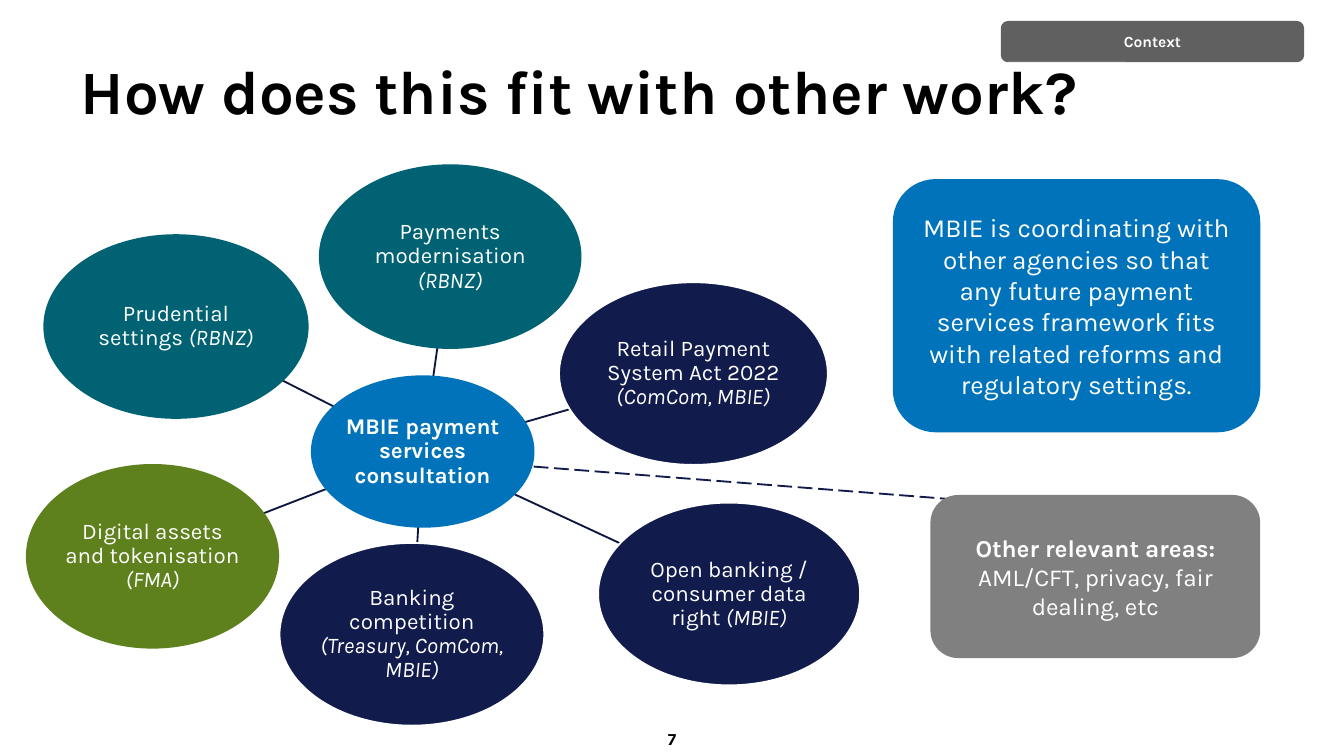
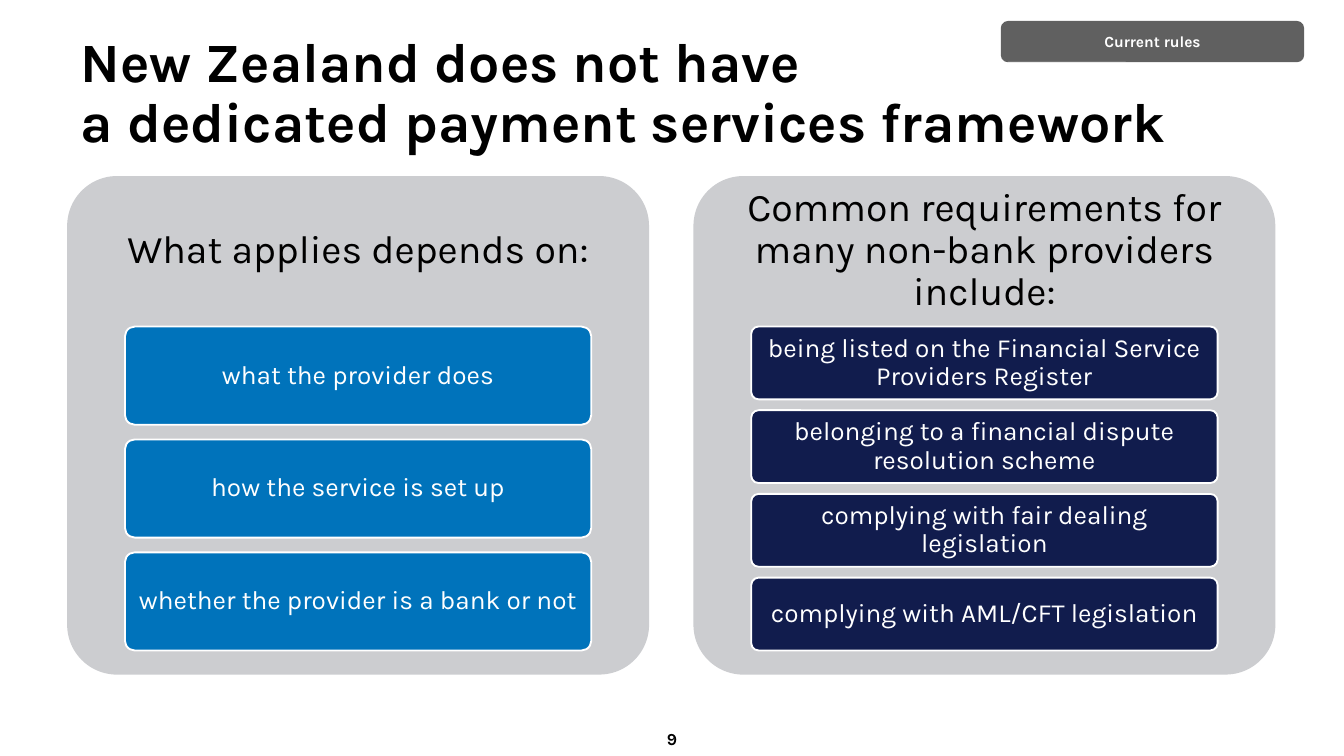
from dataclasses import dataclass
from math import hypot

from lxml.etree import SubElement
from pptx import Presentation
from pptx.dml.color import RGBColor
from pptx.enum.dml import MSO_LINE
from pptx.enum.shapes import MSO_CONNECTOR, MSO_SHAPE as SHAPE
from pptx.enum.text import MSO_ANCHOR, MSO_AUTO_SIZE, PP_ALIGN as ALIGN
from pptx.oxml.ns import qn
from pptx.util import Inches, Pt


@dataclass(frozen=True)
class Theme:
    font: str = "Karla"
    black: str = "000000"
    white: str = "FFFFFF"
    blue: str = "0073BB"
    navy: str = "111C4D"
    spoke: str = "0E163E"
    teal: str = "016273"
    green: str = "5E811D"
    grey: str = "808080"
    tag_grey: str = "606060"
    panel_grey: str = "CCCDD0"
    title: float = 33
    long_title: float = 29.7
    heading: float = 21
    body: float = 14
    aside: float = 13
    node: float = 12
    page: float = 9
    tag: float = 8.3


theme = Theme()


def write(frame, text, *, size, color=theme.white, bold=False, italic=False,
          align=ALIGN.CENTER, spacing=1.0):
    """Append text to the frame's first paragraph; a newline is a line break."""
    paragraph = frame.paragraphs[0]
    paragraph.alignment = align
    paragraph.line_spacing = spacing
    for number, line in enumerate(text.split("\n")):
        if number:
            paragraph.add_line_break()
        run = paragraph.add_run()
        run.text = line
        font = run.font
        font.name, font.size = theme.font, Pt(size)
        font.bold, font.italic = bold, italic
        font.color.rgb = RGBColor.from_string(color)


def add_block(slide, kind, box, fill=None, line=None, line_width=1.0,
              inset=(0.1, 0.05), corner=None):
    """Add a filled shape, or a text box if kind is None; return its text frame."""
    place = [Inches(value) for value in box]
    if kind is None:
        block = slide.shapes.add_textbox(*place)
    else:
        block = slide.shapes.add_shape(kind, *place)
        block.shadow.inherit = False
        block.fill.solid()
        block.fill.fore_color.rgb = RGBColor.from_string(fill)
        if line:
            block.line.color.rgb = RGBColor.from_string(line)
            block.line.width = Pt(line_width)
        else:
            block.line.fill.background()
        if corner is not None:
            block.adjustments[0] = corner
    frame = block.text_frame
    frame.word_wrap = True
    frame.vertical_anchor = MSO_ANCHOR.MIDDLE
    frame.margin_left = frame.margin_right = Inches(inset[0])
    frame.margin_top = frame.margin_bottom = Inches(inset[1])
    return frame


deck = Presentation()
deck.slide_width = Inches(10)
deck.slide_height = deck.slide_width * 9 // 16

# Title, section tag and page number on every slide
slides = []
for title_text, title_size, section, page in [
    ("How does this fit with other work?", theme.title, "Context", "7"),
    ("New Zealand does not have\na dedicated payment services framework",
     theme.long_title, "Current rules", "9"),
]:
    slide = deck.slides.add_slide(deck.slide_layouts[5])
    slides.append(slide)
    title = slide.shapes.title
    title.left, title.top = Inches(0.5), Inches(0.23)
    title.width, title.height = Inches(9), Inches(0.94)
    title.text_frame.auto_size = MSO_AUTO_SIZE.NONE
    title.text_frame.vertical_anchor = MSO_ANCHOR.MIDDLE
    write(title.text_frame, title_text, size=title_size, color=theme.black,
          bold=True, align=ALIGN.LEFT, spacing=0.9)
    tag = add_block(slide, SHAPE.ROUNDED_RECTANGLE, (7.45, 0.16, 2.25, 0.3),
                    theme.tag_grey, theme.tag_grey, 0.5, inset=(0.04, 0.01))
    write(tag, section, size=theme.tag, bold=True)
    footer = add_block(slide, None, (0.69, 5.35, 8.62, 0.3))
    write(footer, page, size=theme.page, color=theme.black, bold=True)

related_work, current_rules = slides

# Related work: a hub with spokes
hub = (2.32, 2.8, 1.65, 1.12)
nodes = [
    ("Payments modernisation ", "(RBNZ)", (2.38, 1.23, 1.94, 1.36),
     theme.teal, theme.teal),
    ("Retail Payment System Act 2022 ", "(ComCom, MBIE)", (4.16, 2.1, 2, 1.36),
     theme.navy, theme.white),
    ("Open banking / consumer data right ", "(MBIE)", (4.45, 3.74, 1.95, 1.36),
     theme.navy, theme.white),
    ("Banking competition ", "(Treasury, ComCom, MBIE)", (2.08, 4.04, 1.97, 1.36),
     theme.navy, theme.white),
    ("Digital assets and tokenisation ", "(FMA)", (0.2, 3.46, 1.87, 1.36),
     theme.green, theme.green),
    ("Prudential settings ", "(RBNZ)", (0.33, 1.75, 1.96, 1.36),
     theme.teal, theme.teal),
]

# Each spoke runs between the two ellipse edges along the line of centres
links = [((3.82, 3.46), (7.28, 3.73), theme.navy, MSO_LINE.LONG_DASH)]
hub_x, hub_y = hub[0] + hub[2] / 2, hub[1] + hub[3] / 2
for _, _, (left, top, width, height), _, _ in nodes:
    node_x, node_y = left + width / 2, top + height / 2
    dx, dy = node_x - hub_x, node_y - hub_y
    leave = 1 / hypot(dx / (hub[2] / 2), dy / (hub[3] / 2))
    arrive = 1 / hypot(dx / (width / 2), dy / (height / 2))
    links.append(((hub_x + dx * leave, hub_y + dy * leave),
                  (node_x - dx * arrive, node_y - dy * arrive), theme.spoke, None))

for start, end, color, dash in links:
    link = related_work.shapes.add_connector(
        MSO_CONNECTOR.STRAIGHT, *[Inches(value) for value in start + end])
    link.line.color.rgb = RGBColor.from_string(color)
    link.line.width = Pt(1)
    if dash:
        link.line.dash_style = dash
    SubElement(link._element.spPr, qn("a:effectLst"))

centre = add_block(related_work, SHAPE.OVAL, hub, theme.blue, theme.blue,
                   inset=(0.01, 0.01))
write(centre, "MBIE payment services consultation", size=theme.node, bold=True,
      spacing=0.9)
for topic, agencies, box, fill, outline in nodes:
    node = add_block(related_work, SHAPE.OVAL, box, fill, outline,
                     inset=(0.01, 0.01))
    write(node, topic, size=theme.node, spacing=0.9)
    write(node, agencies, size=theme.node, italic=True, spacing=0.9)

coordination = add_block(related_work, SHAPE.ROUNDED_RECTANGLE,
                         (6.65, 1.34, 2.72, 1.87), theme.blue, theme.blue)
write(coordination, "MBIE is coordinating with other agencies so that any future "
      "payment services framework fits with related reforms and regulatory "
      "settings.", size=theme.body)
other_areas = add_block(related_work, SHAPE.ROUNDED_RECTANGLE,
                        (6.93, 3.69, 2.44, 1.2), theme.grey, theme.grey)
write(other_areas, "Other relevant areas: ", size=theme.aside, bold=True)
write(other_areas, "AML/CFT, privacy, fair dealing, etc", size=theme.aside)

# Current rules: two panels, the bars in each sharing the same total height
panel_top, panel_width, panel_height = 1.31, 4.33, 3.71
bars_top, bars_height, bar_width = 2.43, 2.41, 3.47
gap_ratio = 0.15
panels = [
    (0.5, "What applies depends on:", theme.blue,
     ["what the provider does",
      "how the service is set up",
      "whether the provider is a bank or not"]),
    (5.16, "Common requirements for many non-bank providers include:", theme.navy,
     ["being listed on the Financial Service Providers Register",
      "belonging to a financial dispute resolution scheme",
      "complying with fair dealing legislation",
      "complying with AML/CFT legislation"]),
]
for left, heading_text, bar_color, rules in panels:
    add_block(current_rules, SHAPE.ROUNDED_RECTANGLE,
              (left, panel_top, panel_width, panel_height), theme.panel_grey,
              corner=0.1)
    heading = add_block(current_rules, None, (left, panel_top, panel_width, 1.11),
                        inset=(0.09, 0.09))
    write(heading, heading_text, size=theme.heading, color=theme.black, spacing=0.9)
    bar_height = bars_height / (len(rules) + gap_ratio * (len(rules) - 1))
    bar_left = left + (panel_width - bar_width) / 2
    for row, rule in enumerate(rules):
        bar_top = bars_top + row * bar_height * (1 + gap_ratio)
        bar = add_block(current_rules, SHAPE.ROUNDED_RECTANGLE,
                        (bar_left, bar_top, bar_width, bar_height), bar_color,
                        theme.white, inset=(0.05, 0.03), corner=0.1)
        write(bar, rule, size=theme.body, spacing=0.9)

deck.save("out.pptx")
